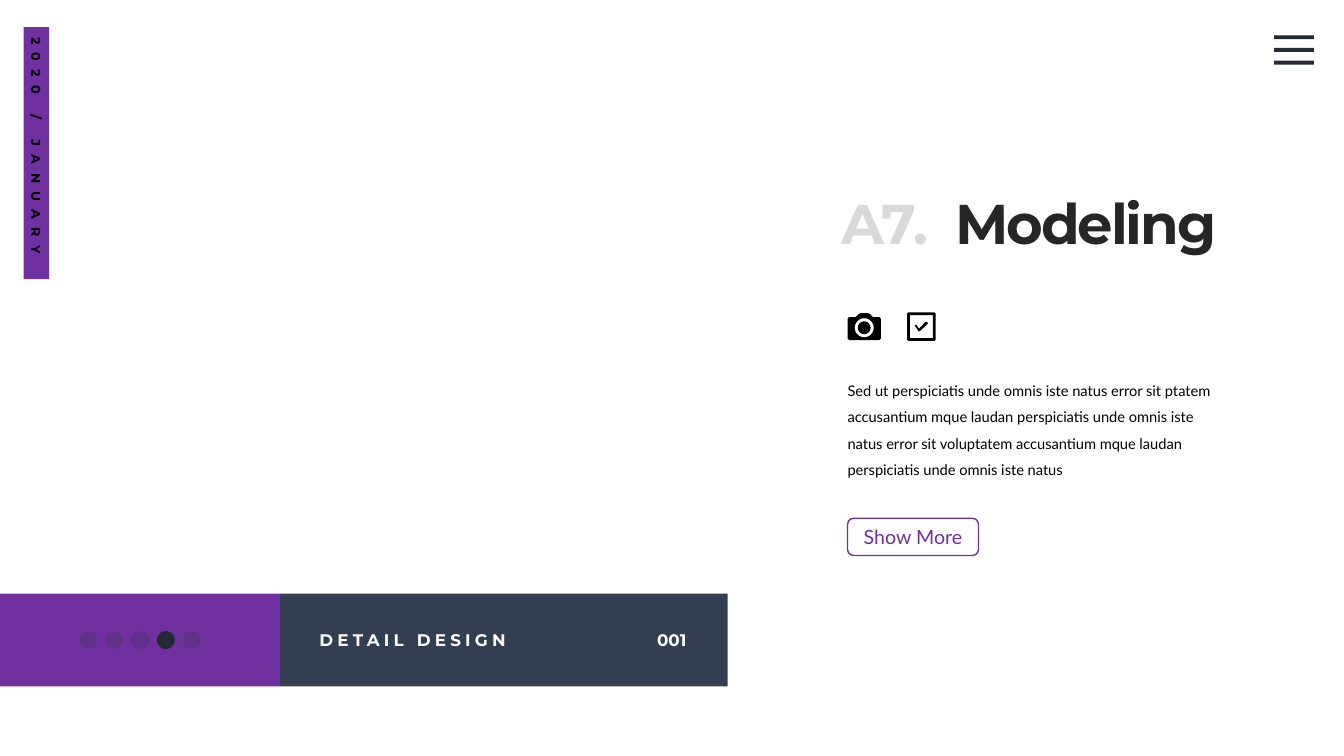
import math
from dataclasses import dataclass

from lxml import etree
from pptx import Presentation
from pptx import util as u
from pptx.dml.color import RGBColor
from pptx.enum import shapes, text
from pptx.oxml import ns


@dataclass(frozen=True)
class Theme:
    purple: str = "7030A0"
    slate: str = "333F50"
    navy: str = "222A35"
    black: str = "000000"
    charcoal: str = "262626"
    grey: str = "D9D9D9"
    white: str = "FFFFFF"
    heading_font: str = "Montserrat"
    body_font: str = "Lato"
    title_size: float = 40
    button_size: float = 14
    label_size: float = 12
    body_size: float = 10.5
    date_size: float = 9


THEME = Theme()


def write_text(shape, content, *, font, size, color, bold=False, tracking=0,
               align=text.PP_ALIGN.LEFT, anchor=text.MSO_ANCHOR.TOP,
               line_spacing=None, wrap=False):
    frame = shape.text_frame
    frame.word_wrap = wrap
    frame.vertical_anchor = anchor
    if not wrap:
        frame.auto_size = text.MSO_AUTO_SIZE.SHAPE_TO_FIT_TEXT
    paragraph = frame.paragraphs[0]
    paragraph.alignment = align
    paragraph.line_spacing = line_spacing
    run = paragraph.add_run()
    run.text = content
    run.font.name = font
    run.font.size = u.Pt(size)
    run.font.bold = bold
    run.font.color.rgb = RGBColor.from_string(color)
    if tracking:
        run._r.get_or_add_rPr().set("spc", str(int(tracking * 100)))


def circle(center_x, center_y, radius, steps=48):
    angles = [2 * math.pi * step / steps for step in range(steps)]
    return [(center_x + radius * math.cos(angle), center_y + radius * math.sin(angle))
            for angle in angles]


def square(left, top, side, cut=0):
    right, bottom = left + side, top + side
    return [(left + cut, top), (right - cut, top), (right, top + cut),
            (right, bottom - cut), (right - cut, bottom), (left + cut, bottom),
            (left, bottom - cut), (left, top + cut)]


class SlideBuilder:
    def __init__(self, slide, theme):
        self.slide = slide
        self.theme = theme

    def group(self):
        return self.slide.shapes.add_group_shape().shapes

    def shape(self, kind, left, top, width, height, fill=None, line=None,
              opacity=None, parent=None):
        container = self.slide.shapes if parent is None else parent
        shape = container.add_shape(kind, u.Cm(left), u.Cm(top), u.Cm(width), u.Cm(height))
        self.paint(shape, fill, line, opacity)
        return shape

    def paint(self, shape, fill=None, line=None, opacity=None):
        shape.shadow.inherit = False
        if fill:
            shape.fill.solid()
            shape.fill.fore_color.rgb = RGBColor.from_string(fill)
        else:
            shape.fill.background()
        if line:
            shape.line.color.rgb = RGBColor.from_string(line)
            shape.line.width = u.Pt(1)
        else:
            shape.line.fill.background()
        if opacity:
            color = shape._element.spPr.find(".//" + ns.qn("a:srgbClr"))
            etree.SubElement(color, ns.qn("a:alpha")).set("val", str(opacity * 1000))

    def bar(self, *box, **style):
        return self.shape(shapes.MSO_SHAPE.RECTANGLE, *box, **style)

    def label(self, content, left, top, width, height, **style):
        box = self.slide.shapes.add_textbox(u.Cm(left), u.Cm(top), u.Cm(width), u.Cm(height))
        write_text(box, content, **style)

    def heading(self, content, *box, **style):
        self.label(content, *box, font=self.theme.heading_font, bold=True, **style)

    def icon(self, contours):
        outlines = [[(u.Cm(x), u.Cm(y)) for x, y in contour] for contour in contours]
        first, *others = outlines
        builder = self.slide.shapes.build_freeform(*first[0], scale=1.0)
        builder.add_line_segments(first[1:], close=True)
        for outline in others:
            builder.move_to(*outline[0])
            builder.add_line_segments(outline[1:], close=True)
        self.paint(builder.convert_to_shape(), self.theme.black)

    def menu(self, left, top, pitch):
        group = self.group()
        for row in range(3):
            self.bar(left, top + row * pitch, 1, 0.1, fill=self.theme.navy, parent=group)

    def pager(self, left, top, pitch, count, current):
        group = self.group()
        for index in range(count):
            active = index == current
            self.shape(shapes.MSO_SHAPE.OVAL, left + index * pitch, top, 0.46, 0.46,
                       fill=self.theme.navy if active else self.theme.slate,
                       opacity=None if active else 25, parent=group)

    def button(self, content, *box):
        shape = self.shape(shapes.MSO_SHAPE.ROUNDED_RECTANGLE, *box, line=self.theme.purple)
        write_text(shape, content, font=self.theme.body_font, size=self.theme.button_size,
                   color=self.theme.purple, align=text.PP_ALIGN.CENTER,
                   anchor=text.MSO_ANCHOR.MIDDLE, wrap=True)


def main():
    presentation = Presentation()
    presentation.slide_width = u.Cm(33.87)
    presentation.slide_height = u.Cm(19.05)
    slide = presentation.slides.add_slide(presentation.slide_layouts[6])
    page = SlideBuilder(slide, THEME)

    date_tab = page.bar(-2.26, 3.54, 6.35, 0.64, fill=THEME.purple)
    date_tab.rotation = 90
    write_text(date_tab, "2020 / JANUARY", font=THEME.heading_font, size=THEME.date_size,
               color=THEME.black, bold=True, tracking=6)
    page.menu(32.11, 0.89, 0.32)

    page.heading("A7.", 20.96, 4.62, 2.87, 1.96, size=THEME.title_size, color=THEME.grey)
    page.heading("Modeling", 23.83, 4.62, 7.11, 1.96, size=THEME.title_size,
                 color=THEME.charcoal, tracking=-1.5)

    page.bar(7.06, 14.96, 11.28, 2.34, fill=THEME.slate)
    page.heading("001", 16.31, 15.75, 1.27, 0.76, size=THEME.label_size, color=THEME.white)
    page.heading("DETAIL DESIGN", 7.8, 15.75, 5.36, 0.76, size=THEME.label_size,
                 color=THEME.white, tracking=3)
    page.bar(0, 14.96, 7.06, 2.34, fill=THEME.purple)
    page.pager(2, 15.9, 0.65, count=5, current=3)

    page.label("Sed ut perspiciatis unde omnis iste natus error sit ptatem accusantium mque "
               "laudan perspiciatis unde omnis iste natus error sit voluptatem accusantium "
               "mque laudan perspiciatis unde omnis iste natus",
               21.11, 9.27, 10.16, 3.1, font=THEME.body_font, size=THEME.body_size,
               color=THEME.black, line_spacing=1.5, wrap=True)

    camera_body = [(21.4, 7.99), (21.56, 7.99), (21.65, 7.91), (21.7, 7.89), (21.87, 7.89),
                   (21.92, 7.91), (22, 7.99), (22.16, 7.99), (22.2, 8.03), (22.2, 8.53),
                   (22.16, 8.57), (21.4, 8.57), (21.36, 8.53), (21.36, 8.03)]
    page.icon([camera_body, circle(21.78, 8.26, 0.24), circle(21.78, 8.26, 0.16)])

    tick = [(23.05, 8.2), (23.09, 8.18), (23.16, 8.28), (23.32, 8.12), (23.36, 8.11),
            (23.39, 8.15), (23.19, 8.34), (23.15, 8.35)]
    page.icon([square(22.86, 7.87, 0.72, cut=0.03), square(22.93, 7.94, 0.58), tick])

    page.button("Show More", 21.36, 13.06, 3.3, 0.94)
    presentation.save("out.pptx")


if __name__ == "__main__":
    main()
